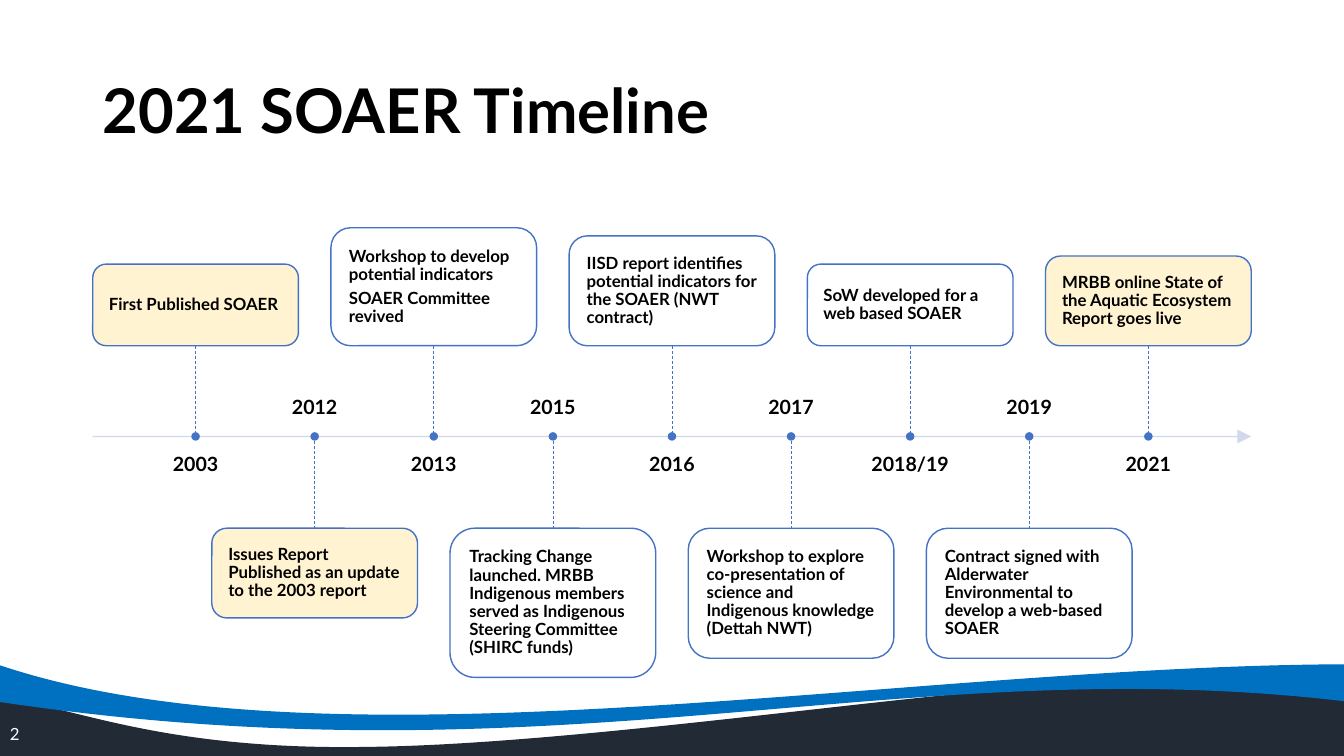
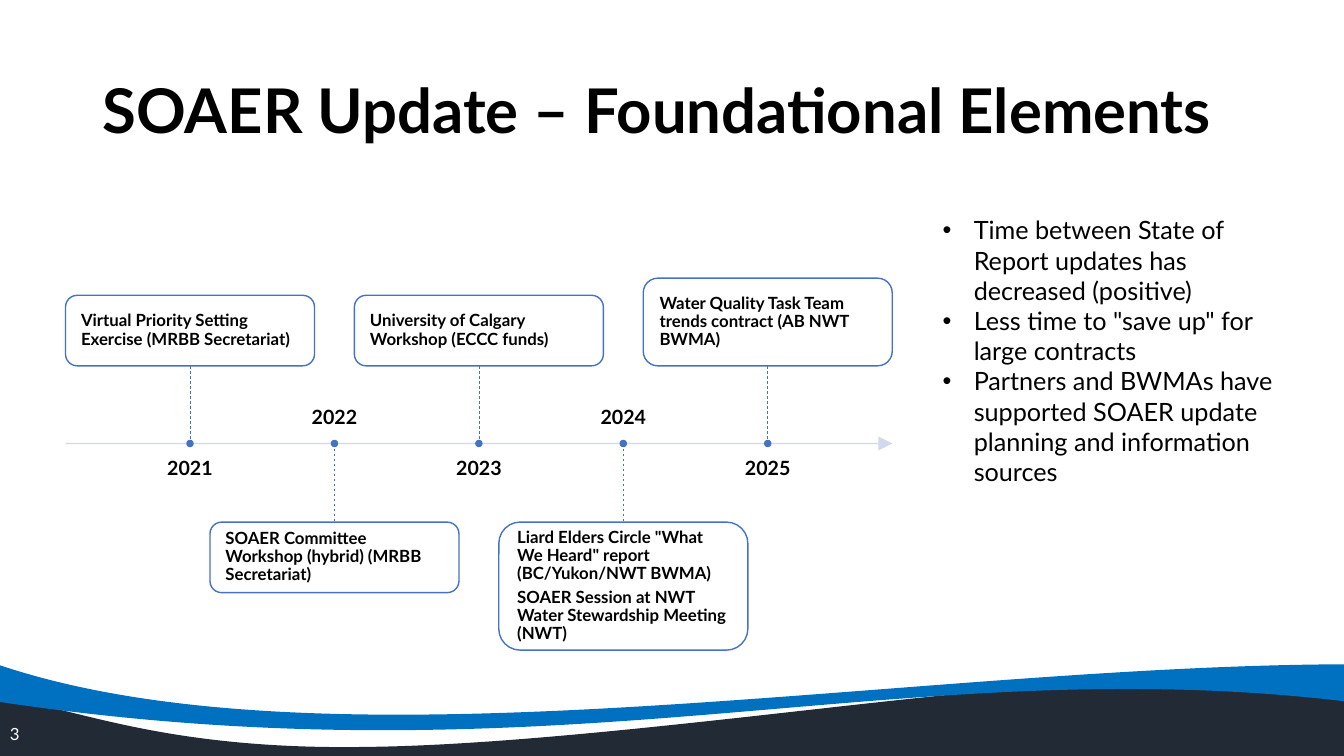
"""Two SOAER timeline slides with a shared title, wave footer and page number."""
from lxml import etree
from pptx import Presentation
from pptx.dml.color import RGBColor
from pptx.enum.dml import MSO_LINE
from pptx.enum.shapes import MSO_CONNECTOR, MSO_SHAPE
from pptx.enum.text import MSO_ANCHOR, PP_ALIGN
from pptx.oxml.ns import qn
from pptx.util import Inches, Pt

STRAIGHT = MSO_CONNECTOR.STRAIGHT
ROUNDED, OVAL = MSO_SHAPE.ROUNDED_RECTANGLE, MSO_SHAPE.OVAL
TOP, MIDDLE, BOTTOM = MSO_ANCHOR.TOP, MSO_ANCHOR.MIDDLE, MSO_ANCHOR.BOTTOM
LEFT, CENTER = PP_ALIGN.LEFT, PP_ALIGN.CENTER
DASH = MSO_LINE.DASH

BLACK = RGBColor(0x00, 0x00, 0x00)
WHITE = RGBColor(0xFF, 0xFF, 0xFF)
NAVY = RGBColor(0x22, 0x2A, 0x35)
WAVE_BLUE = RGBColor(0x00, 0x70, 0xC0)
BLUE = RGBColor(0x44, 0x72, 0xC4)
PALE_BLUE = RGBColor(0xCF, 0xD5, 0xEA)
CREAM = RGBColor(0xFF, 0xF2, 0xCC)

FONT = "Lato"
WIDTH, HEIGHT = 13.33, 7.5
LABEL_SHARE = 0.88
INDENT = 0.31

WAVES = [
    (NAVY, (-0.03, 6.6, 13.36, 7.5), [
        ("moveTo", [(-0.03, 6.95)]),
        ("cubicBezTo", [(0.56, 6.92), (1.42, 7.45), (3.65, 7.41)]),
        ("cubicBezTo", [(5.46, 7.39), (8.25, 6.99), (9.87, 6.85)]),
        ("cubicBezTo", [(11.49, 6.71), (13.5, 6.48), (13.36, 6.67)]),
        ("cubicBezTo", [(13.35, 6.95), (13.35, 7.22), (13.35, 7.5)]),
        ("lnTo", [(-0.02, 7.5)]),
        ("cubicBezTo", [(-0.02, 7.32), (-0.03, 7.13), (-0.03, 6.95)]),
        ("close", []),
    ]),
    (WAVE_BLUE, (-0.03, 6.59, 13.36, 7.24), [
        ("moveTo", [(-0.03, 6.59)]),
        ("cubicBezTo", [(3.26, 7.71), (8.97, 6.6), (13.36, 6.59)]),
        ("lnTo", [(13.36, 6.96)]),
        ("cubicBezTo", [(8.91, 6.43), (5.65, 7.81), (-0.03, 6.96)]),
        ("lnTo", [(-0.03, 6.59)]),
        ("close", []),
    ]),
]

SLIDES = [
    {
        "title": "2021 SOAER Timeline",
        "page": "2",
        "axis": {"left": 0.92, "right": 12.41, "y": 4.33, "card": 2.04,
                 "stems": (0.9, 0.91), "gap": 0.18, "label": 0.54, "dot": 0.07},
        "events": [
            ("2003", 0.81, CREAM, ["First Published SOAER"]),
            ("2012", 0.89, CREAM, ["Issues Report Published as an update to the 2003 report"]),
            ("2013", 1.17, WHITE, ["Workshop to develop potential indicators",
                                   "SOAER Committee revived"]),
            ("2015", 1.48, WHITE, ["Tracking Change launched. MRBB Indigenous members served "
                                   "as Indigenous Steering Committee (SHIRC funds)"]),
            ("2016", 1.09, WHITE, ["IISD report identifies potential indicators for the SOAER "
                                   "(NWT contract)"]),
            ("2017", 1.29, WHITE, ["Workshop to explore co-presentation of science and "
                                   "Indigenous knowledge (Dettah NWT)"]),
            ("2018/19", 0.81, WHITE, ["SoW developed for a web based SOAER"]),
            ("2019", 1.29, WHITE, ["Contract signed with Alderwater Environmental to develop "
                                   "a web-based SOAER"]),
            ("2021", 0.89, CREAM, ["MRBB online State of the Aquatic Ecosystem Report goes live"]),
        ],
        "points": [],
    },
    {
        "title": "SOAER Update – Foundational Elements",
        "page": "3",
        "axis": {"left": 0.65, "right": 8.85, "y": 4.4, "card": 2.47,
                 "stems": (0.77, 0.78), "gap": 0.15, "label": 0.46, "dot": 0.06},
        "events": [
            ("2021", 0.7, WHITE, ["Virtual Priority Setting Exercise (MRBB Secretariat)"]),
            ("2022", 0.7, WHITE, ["SOAER Committee Workshop (hybrid) (MRBB Secretariat)"]),
            ("2023", 0.7, WHITE, ["University of Calgary Workshop (ECCC funds)"]),
            ("2024", 1.27, WHITE, ['Liard Elders Circle "What We Heard" report (BC/Yukon/NWT BWMA)',
                                   "SOAER Session at NWT Water Stewardship Meeting (NWT)"]),
            ("2025", 0.87, WHITE, ["Water Quality Task Team trends contract (AB NWT BWMA)"]),
        ],
        "points": [
            "Time between State of Report updates has decreased (positive)",
            'Less time to "save up" for large contracts',
            "Partners and BWMAs have supported SOAER update planning and information sources",
        ],
    },
]


def write(shape, paragraphs, size, color=BLACK, bold=False, align=LEFT, anchor=TOP,
          insets=(0.1, 0.05), spacing=None, before=0, bullet=None):
    """Fill a shape with formatted paragraphs."""
    frame = shape.text_frame
    frame.word_wrap = True
    frame.vertical_anchor = anchor
    frame.margin_left = frame.margin_right = Inches(insets[0])
    frame.margin_top = frame.margin_bottom = Inches(insets[1])
    for index, text in enumerate(paragraphs):
        paragraph = frame.add_paragraph() if index else frame.paragraphs[0]
        paragraph.alignment = align
        if spacing:
            paragraph.line_spacing = spacing
        if index and before:
            paragraph.space_before = Pt(before)
        if bullet:
            properties = paragraph._p.get_or_add_pPr()
            properties.set("marL", str(Inches(INDENT)))
            properties.set("indent", str(-Inches(INDENT)))
            etree.SubElement(properties, qn("a:buFont")).set("typeface", "Arial")
            etree.SubElement(properties, qn("a:buChar")).set("char", bullet)
        run = paragraph.add_run()
        run.text = text
        run.font.name, run.font.size, run.font.bold = FONT, Pt(size), bold
        run.font.color.rgb = color


def text_box(slide, left, top, width, height, paragraphs, **style):
    """Add a text box at a place given in inches."""
    box = slide.shapes.add_textbox(*map(Inches, (left, top, width, height)))
    write(box, paragraphs, **style)


def make_translucent(element, percent=90):
    """Set the opacity of the first colour inside an element."""
    color = next(element.iter(qn("a:srgbClr")))
    etree.SubElement(color, qn("a:alpha")).set("val", str(percent * 1000))


def preset(slide, kind, left, top, width, height, fill):
    """Add a blue-outlined preset shape."""
    shape = slide.shapes.add_shape(kind, *map(Inches, (left, top, width, height)))
    shape.shadow.inherit = False
    shape.fill.solid()
    shape.fill.fore_color.rgb = fill
    shape.line.color.rgb = BLUE
    shape.line.width = Pt(1)
    return shape


def connect(slide, start, end, color, width):
    """Add a straight line without shadow."""
    line = slide.shapes.add_connector(STRAIGHT, *map(Inches, start + end))
    line.line.color.rgb = color
    line.line.width = Pt(width)
    etree.SubElement(line._element.spPr, qn("a:effectLst"))
    return line


def draw_waves(slide):
    """Draw the footer waves as curved outlines inside their frames."""
    for color, (left, top, right, bottom), commands in WAVES:
        corners = [(left, top), (right, top), (right, bottom), (left, bottom)]
        points = [(Inches(x), Inches(y)) for x, y in corners]
        builder = slide.shapes.build_freeform(*points[0], scale=1.0)
        builder.add_line_segments(points[1:], close=True)
        wave = builder.convert_to_shape()
        outline = next(wave._element.iter(qn("a:path")))
        for corner in list(outline):
            outline.remove(corner)
        for command, stops in commands:
            part = etree.SubElement(outline, qn("a:" + command))
            for x, y in stops:
                stop = etree.SubElement(part, qn("a:pt"))
                stop.set("x", str(Inches(x) - Inches(left)))
                stop.set("y", str(Inches(y) - Inches(top)))
        wave.shadow.inherit = False
        wave.fill.solid()
        wave.fill.fore_color.rgb = color
        wave.line.fill.background()


def draw_timeline(slide, axis, events):
    """Draw the axis with cards alternating above and below it."""
    left, right, y, card = axis["left"], axis["right"], axis["y"], axis["card"]
    step = (right - left - card) / (len(events) - 1)
    arrow = connect(slide, (left, y), (right, y), PALE_BLUE, 1)
    outline = arrow.line._get_or_add_ln()
    make_translucent(outline)
    head = etree.SubElement(outline, qn("a:tailEnd"))
    for key, value in (("type", "triangle"), ("w", "lg"), ("len", "lg")):
        head.set(key, value)

    label_width, dot = card * LABEL_SHARE, axis["dot"]
    stem_up, stem_down = axis["stems"]
    for index, (year, height, fill, notes) in enumerate(events):
        above = index % 2 == 0
        card_left = left + index * step
        center = card_left + card / 2
        edge = y - stem_up if above else y + stem_down
        card_top = edge - height if above else edge
        label_top = y + axis["gap"] if above else y - axis["gap"] - axis["label"]

        body = preset(slide, ROUNDED, card_left, card_top, card, height, fill)
        make_translucent(body._element.spPr)
        write(body, notes, size=12, bold=True, anchor=MIDDLE, insets=(0.12, 0.12),
              spacing=0.9, before=4.2)
        stem = connect(slide, (center, min(edge, y)), (center, max(edge, y)), BLUE, 0.5)
        stem.line.dash_style = DASH
        text_box(slide, center - label_width / 2, label_top, label_width, axis["label"],
                 [year], size=14, bold=True, align=CENTER, insets=(0, 0), spacing=0.9,
                 anchor=TOP if above else BOTTOM)
        preset(slide, OVAL, center - dot / 2, y - dot / 2, dot, dot, BLUE)


def main():
    """Build and save the slides."""
    deck = Presentation()
    deck.slide_width, deck.slide_height = Inches(WIDTH), Inches(HEIGHT)
    for content in SLIDES:
        slide = deck.slides.add_slide(deck.slide_layouts[6])
        draw_waves(slide)
        text_box(slide, 0.92, 0.4, 11.5, 1.45, [content["title"]], size=44, bold=True,
                 anchor=MIDDLE, spacing=0.9)
        draw_timeline(slide, content["axis"], content["events"])
        text_box(slide, 0, 7.08, 3, 0.4, [content["page"]], size=12, color=WHITE,
                 anchor=MIDDLE)
        if content["points"]:
            text_box(slide, 9.25, 2.08, 3.53, 2.83, content["points"], size=18, bullet="•")
    deck.save("out.pptx")


if __name__ == "__main__":
    main()
